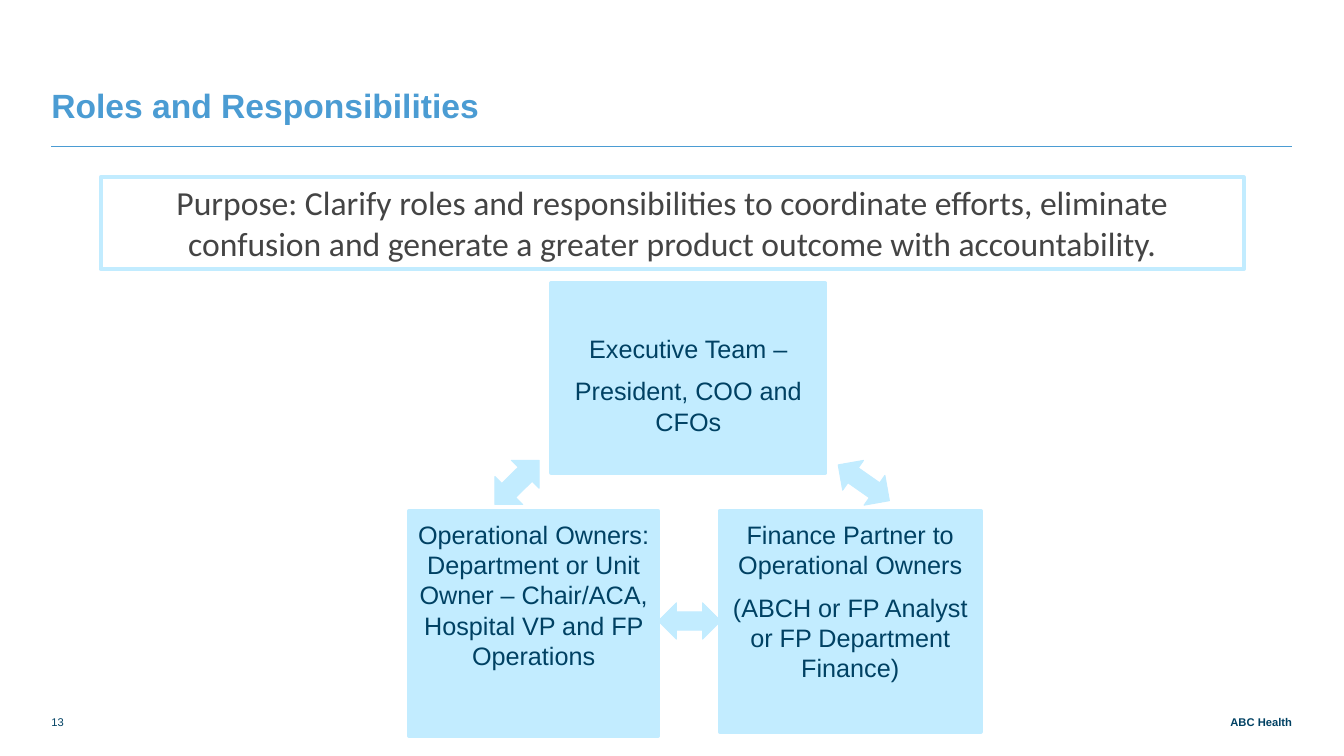
"""Build the Roles and Responsibilities slide."""
from pptx import Presentation
from pptx import util as u
from pptx.dml.color import RGBColor
from pptx.enum import shapes, text
from pptx.oxml.ns import qn
from lxml import etree

THEME = {
    "sky": "C2ECFF", "navy": "004163", "blue": "4B9CD3", "gray": "444444",
    "title": 24, "lead": 24, "body": 18, "foot": 8,
    "font": "Arial", "alt": "Calibri", "edge": 3, "thin": 0.75, "rule": 0.5,
}
TITLE = "Roles and Responsibilities"
LEAD = ("Purpose: Clarify roles and responsibilities to coordinate efforts, "
        "eliminate confusion and generate a greater product outcome with accountability.")
ROLES = [
    ((393.8, 202.3, 195.8, 135.4), 35.5,
     ["Executive Team –", "President, COO and CFOs"]),
    ((292.3, 365, 177.8, 160.6), 5.8,
     ["Operational Owners: Department or Unit Owner – Chair/ACA, "
      "Hospital VP and FP Operations"]),
    ((514.1, 365, 186.5, 157.7), 5.8,
     ["Finance Partner to Operational Owners",
      "(ABCH or FP Analyst or FP Department Finance)"]),
]
ARROWS = [((470.2, 430.6, 44.6, 25.9), 0),
          ((594.7, 331.9, 44.6, 25.9), 35),
          ((347, 330.5, 44.6, 28.1), 315.2)]
LEFT, RIGHT = 36.7, 923
FOOT_Y, FOOT_H = 504, 16.6
PAGE_W, ORG_W = 33, 118
ALIGN = text.PP_ALIGN
ANCHOR = text.MSO_ANCHOR


def color(name):
    """Return a theme colour."""
    return RGBColor.from_string(THEME[name])


def pts(box):
    """Turn numbers into point lengths."""
    return [u.Pt(n) for n in box]


def write(shape, lines, size="body", tint="navy", font="font", bold=False,
          align=ALIGN.LEFT, anchor=ANCHOR.TOP, pad=(0, 0, 0, 0), after=0, lead=None):
    """Put formatted paragraphs into a shape."""
    frame = shape.text_frame
    frame.word_wrap = True
    frame.vertical_anchor = anchor
    (frame.margin_left, frame.margin_top,
     frame.margin_right, frame.margin_bottom) = pts(pad)
    for i, line in enumerate(lines):
        para = frame.add_paragraph() if i else frame.paragraphs[0]
        para.alignment = align
        para.space_after = u.Pt(after)
        if lead:
            para.line_spacing = u.Pt(lead)
        run = para.add_run()
        run.text = line
        run.font.name = THEME[font]
        run.font.size = u.Pt(THEME[size])
        run.font.bold = bold
        run.font.color.rgb = color(tint)


def block(slide, kind, box, fill="sky", edge="edge"):
    """Add a preset shape with a sky outline."""
    shape = slide.shapes.add_shape(kind, *pts(box))
    shape.shadow.inherit = False
    if fill:
        shape.fill.solid()
        shape.fill.fore_color.rgb = color(fill)
    else:
        shape.fill.background()
    shape.line.color.rgb = color("sky")
    shape.line.width = u.Pt(THEME[edge])
    return shape


def label(slide, box, line, **form):
    """Add a text box anchored at the bottom."""
    write(slide.shapes.add_textbox(*pts(box)), [line], anchor=ANCHOR.BOTTOM, **form)


def main():
    """Draw and save the slide."""
    deck = Presentation()
    deck.slide_width, deck.slide_height = pts((960, 540))
    slide = deck.slides.add_slide(deck.slide_layouts[6])
    kinds = shapes.MSO_SHAPE

    rule = slide.shapes.add_connector(
        shapes.MSO_CONNECTOR.STRAIGHT, *pts((LEFT, 104.4, RIGHT, 104.4)))
    rule.line.color.rgb = color("blue")
    rule.line.width = u.Pt(THEME["rule"])
    etree.SubElement(rule._element.spPr, qn("a:effectLst"))

    label(slide, (RIGHT - ORG_W, FOOT_Y, ORG_W, FOOT_H), "ABC Health",
          size="foot", bold=True, align=ALIGN.RIGHT)
    label(slide, (LEFT, FOOT_Y, PAGE_W, FOOT_H), "13", size="foot")
    label(slide, (LEFT, 27.4, RIGHT - LEFT, 62), TITLE,
          size="title", tint="blue", bold=True, lead=28)

    for box, top, lines in ROLES:
        write(block(slide, kinds.RECTANGLE, box), lines,
              align=ALIGN.CENTER, pad=(0, top, 0, 0), after=9)

    write(block(slide, kinds.RECTANGLE, (72, 126.7, 816.5, 65.5), fill=None), [LEAD],
          size="lead", tint="gray", font="alt", align=ALIGN.CENTER,
          pad=(7.2, 3.6, 7.2, 3.6))

    for box, turn in ARROWS:
        block(slide, kinds.LEFT_RIGHT_ARROW, box, edge="thin").rotation = turn

    deck.save("out.pptx")


if __name__ == "__main__":
    main()
